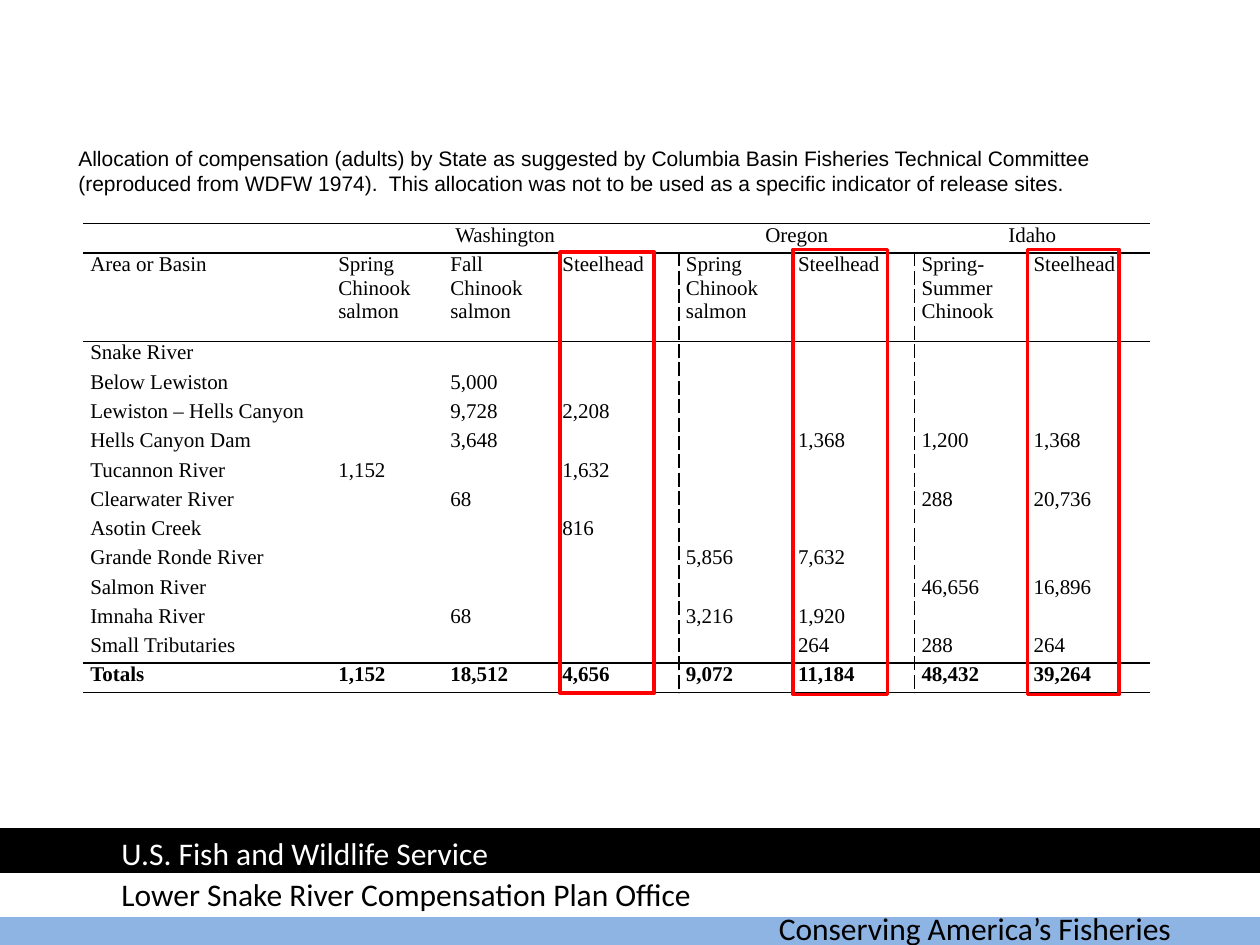
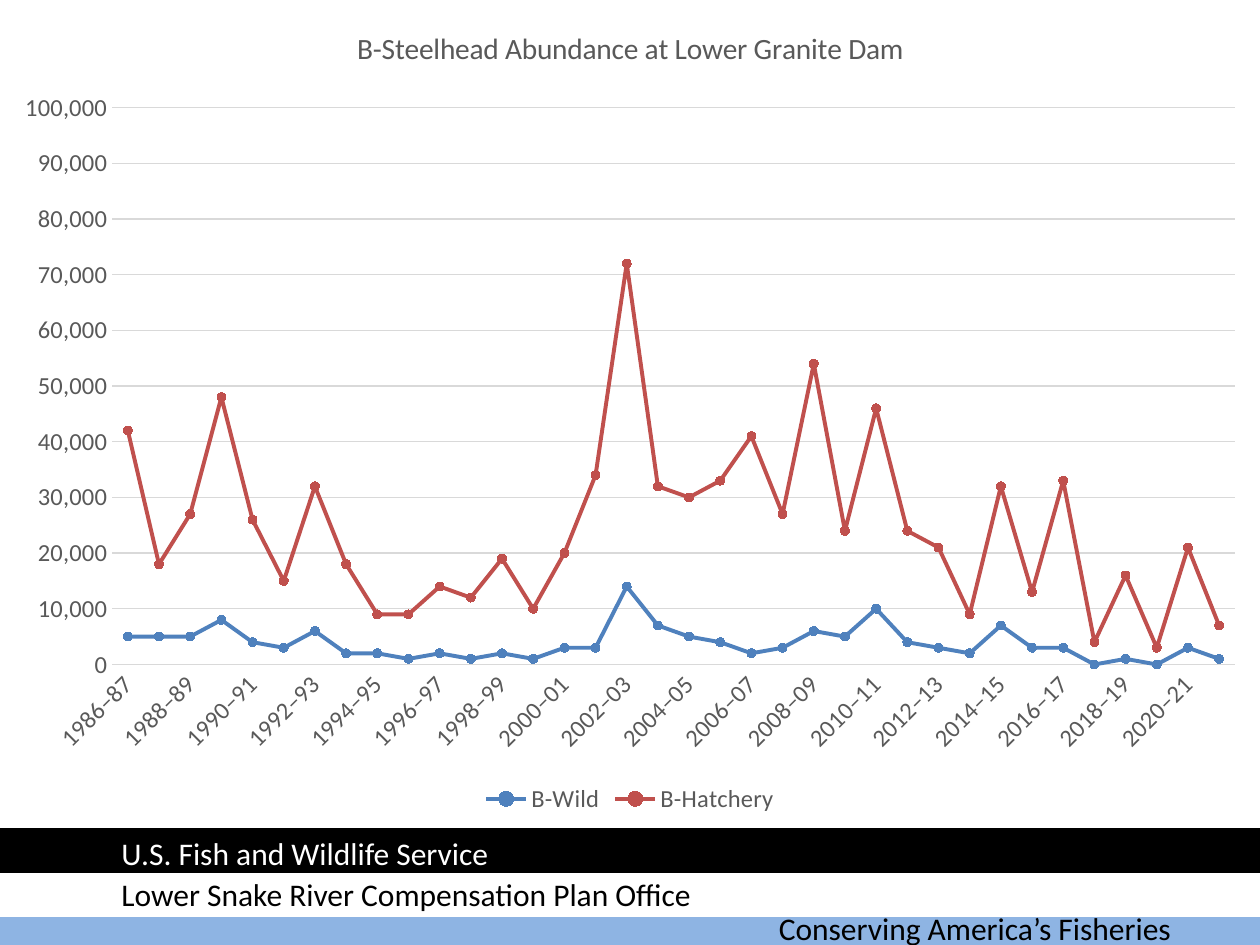
import pptx
import pptx.chart.data
import pptx.dml.color
import pptx.enum.chart
import pptx.enum.shapes
import pptx.enum.text
import pptx.oxml
import pptx.oxml.ns
import pptx.util

Cm = pptx.util.Cm
Pt = pptx.util.Pt
RGBColor = pptx.dml.color.RGBColor

BLACK = RGBColor(0x00, 0x00, 0x00)
WHITE = RGBColor(0xFF, 0xFF, 0xFF)
SKY = RGBColor(0x8E, 0xB4, 0xE3)
RED = RGBColor(0xFF, 0x00, 0x00)
GREY = RGBColor(0x59, 0x59, 0x59)
GRID_GREY = RGBColor(0xD9, 0xD9, 0xD9)
WILD_BLUE = RGBColor(0x4F, 0x81, 0xBD)
HATCHERY_RED = RGBColor(0xC0, 0x50, 0x4D)

PLAIN_TABLE_STYLE = "{2D5ABB26-0587-4C30-8999-92F81FD0307C}"

CAPTION = (
    "Allocation of compensation (adults) by State as suggested by Columbia Basin "
    "Fisheries Technical Committee (reproduced from WDFW 1974).  This allocation "
    "was not to be used as a specific indicator of release sites."
)

STATES = [("Washington", 1, 3), ("Oregon", 4, 5), ("Idaho", 6, 7)]
ALLOCATION = [
    ["Area or Basin", "Spring Chinook salmon", "Fall Chinook salmon", "Steelhead",
     "Spring Chinook salmon", "Steelhead", "Spring-Summer Chinook", "Steelhead"],
    ["Snake River", "", "", "", "", "", "", ""],
    ["Below Lewiston", "", "5,000", "", "", "", "", ""],
    ["Lewiston – Hells Canyon", "", "9,728", "2,208", "", "", "", ""],
    ["Hells Canyon Dam", "", "3,648", "", "", "1,368", "1,200", "1,368"],
    ["Tucannon River", "1,152", "", "1,632", "", "", "", ""],
    ["Clearwater River", "", "68", "", "", "", "288", "20,736"],
    ["Asotin Creek", "", "", "816", "", "", "", ""],
    ["Grande Ronde River", "", "", "", "5,856", "7,632", "", ""],
    ["Salmon River", "", "", "", "", "", "46,656", "16,896"],
    ["Imnaha River", "", "68", "", "3,216", "1,920", "", ""],
    ["Small Tributaries", "", "", "", "", "264", "288", "264"],
    ["Totals", "1,152", "18,512", "4,656", "9,072", "11,184", "48,432", "39,264"],
]
COLUMN_WIDTHS = [5, 2.26, 2.26, 2.49, 2.26, 2.49, 2.26, 2.49]
ROW_HEIGHT = 0.59
HEADING_HEIGHT = 1.78

FIRST_YEAR, LAST_YEAR = 1986, 2021
B_WILD = [
    5000, 5000, 5000, 8000, 4000, 3000, 6000, 2000, 2000, 1000, 2000, 1000,
    2000, 1000, 3000, 3000, 14000, 7000, 5000, 4000, 2000, 3000, 6000, 5000,
    10000, 4000, 3000, 2000, 7000, 3000, 3000, 0, 1000, 0, 3000, 1000,
]
B_HATCHERY = [
    37000, 13000, 22000, 40000, 22000, 12000, 26000, 16000, 7000, 8000, 12000, 11000,
    17000, 9000, 17000, 31000, 58000, 25000, 25000, 29000, 39000, 24000, 48000, 19000,
    36000, 20000, 18000, 7000, 25000, 10000, 30000, 4000, 15000, 3000, 18000, 6000,
]


def set_font(font, name, size, color, bold=False):
    font.name = name
    font.size = Pt(size)
    font.bold = bold
    font.color.rgb = color


def add_rectangle(page, left, top, width, height, line, fill=None):
    box = page.shapes.add_shape(
        pptx.enum.shapes.MSO_SHAPE.RECTANGLE, Cm(left), Cm(top), Cm(width), Cm(height))
    box.shadow.inherit = False
    box.line.color.rgb = line
    box.line.width = Pt(2)
    if fill is None:
        box.fill.background()
    else:
        box.fill.solid()
        box.fill.fore_color.rgb = fill


def add_text(page, text, left, top, width, height, font_name, size, color):
    box = page.shapes.add_textbox(Cm(left), Cm(top), Cm(width), Cm(height))
    frame = box.text_frame
    frame.word_wrap = True
    frame.text = text
    set_font(frame.paragraphs[0].font, font_name, size, color)
    return frame


def add_footer(page):
    for left, top, color in [(-0.03, 18.22, SKY), (0, 17.61, WHITE), (0, 16.73, BLACK)]:
        add_rectangle(page, left, top, 25.4, 0.84, color, color)
    for text, left, top, width, color in [
        ("Conserving America’s Fisheries", 15.45, 18.21, 9.32, BLACK),
        ("U.S. Fish and Wildlife Service", 2.2, 16.69, 10.57, WHITE),
        ("Lower Snake River Compensation Plan Office", 2.2, 17.51, 12.62, BLACK),
    ]:
        add_text(page, text, left, top, width, 1.02, "Calibri", 18, color)


def add_page(deck):
    page = deck.slides.add_slide(deck.slide_layouts[6])
    add_footer(page)
    return page


def set_borders(cell, borders):
    """Draw black 1 pt borders; borders maps L, R, T, B to a dash name."""
    properties = cell._tc.get_or_add_tcPr()
    for side in "LRTB":
        if side in borders:
            look = (f'<a:solidFill><a:srgbClr val="{BLACK}"/></a:solidFill>'
                    f'<a:prstDash val="{borders[side]}"/>')
        else:
            look = "<a:noFill/>"
        properties.append(pptx.oxml.parse_xml(
            f'<a:ln{side} {pptx.oxml.ns.nsdecls("a")} w="12700">{look}</a:ln{side}>'))


def border_rule(row, column, last_row):
    """Rule off the headings and totals, and part the states with dashes."""
    borders = {}
    if row in (0, 1, 2, last_row):
        borders["T"] = "solid"
    if row in (0, 1, last_row - 1, last_row):
        borders["B"] = "solid"
    if row > 0:
        first_columns = [first for _, first, _ in STATES[1:]]
        if column in first_columns:
            borders["L"] = "dash"
        if column + 1 in first_columns:
            borders["R"] = "dash"
    return borders


def style_cell(cell, borders, bold):
    cell.margin_left = cell.margin_right = Cm(0.14)
    cell.margin_top = cell.margin_bottom = 0
    set_borders(cell, borders)
    cell.fill.background()
    para = cell.text_frame.paragraphs[0]
    set_font(para.font, "Times New Roman", 12, BLACK, bold)
    para._p.get_or_add_endParaRPr().set("sz", "1200")


def add_allocation_table(page):
    last_row = len(ALLOCATION)
    heights = [ROW_HEIGHT, HEADING_HEIGHT] + [ROW_HEIGHT] * (last_row - 1)
    table = page.shapes.add_table(
        last_row + 1, len(COLUMN_WIDTHS), Cm(1.68), Cm(4.51),
        Cm(sum(COLUMN_WIDTHS)), Cm(sum(heights))).table
    table.first_row = table.horz_banding = False
    table._tbl.tblPr.find(pptx.oxml.ns.qn("a:tableStyleId")).text = PLAIN_TABLE_STYLE
    for column, width in zip(table.columns, COLUMN_WIDTHS):
        column.width = Cm(width)
    for row, height in zip(table.rows, heights):
        row.height = Cm(height)

    for state, first, last in STATES:
        cell = table.cell(0, first)
        cell.merge(table.cell(0, last))
        cell.text = state
        cell.text_frame.paragraphs[0].alignment = pptx.enum.text.PP_ALIGN.CENTER
    for row, values in enumerate(ALLOCATION, start=1):
        for column, value in enumerate(values):
            if value:
                table.cell(row, column).text = value
    for row in range(last_row + 1):
        for column in range(len(COLUMN_WIDTHS)):
            style_cell(table.cell(row, column), border_rule(row, column, last_row),
                       bold=row == last_row)


def style_axes(chart):
    no_tick = pptx.enum.chart.XL_TICK_MARK.NONE
    years, counts = chart.category_axis, chart.value_axis
    for axis in (years, counts):
        axis.major_tick_mark = axis.minor_tick_mark = no_tick
        set_font(axis.tick_labels.font, "Calibri", 14, GREY)
    years.format.line.color.rgb = GRID_GREY
    years.format.line.width = Pt(0.75)
    label_body = years._element.find(".//" + pptx.oxml.ns.qn("a:bodyPr"))
    label_body.set("rot", str(-45 * 60000))
    counts.format.line.fill.background()
    counts.minimum_scale = 0
    counts.maximum_scale = 100000
    counts.major_unit = 10000
    counts.tick_labels.number_format = "#,##0"
    counts.tick_labels.number_format_is_linked = False
    counts.major_gridlines.format.line.color.rgb = GRID_GREY
    counts.major_gridlines.format.line.width = Pt(0.75)


def style_series(series, color):
    series.smooth = False
    series.format.line.color.rgb = color
    series.format.line.width = Pt(2.25)
    marker = series.marker
    marker.style = pptx.enum.chart.XL_MARKER_STYLE.CIRCLE
    marker.size = 5
    marker.format.fill.solid()
    marker.format.fill.fore_color.rgb = color
    marker.format.line.color.rgb = color


def add_abundance_chart(page):
    data = pptx.chart.data.CategoryChartData(number_format="#,##0")
    data.categories = [f"{year}–{(year + 1) % 100:02d}"
                       for year in range(FIRST_YEAR, LAST_YEAR + 1)]
    data.add_series("B-Wild", B_WILD)
    data.add_series("B-Hatchery", B_HATCHERY)
    chart = page.shapes.add_chart(
        pptx.enum.chart.XL_CHART_TYPE.LINE_MARKERS_STACKED,
        0, 0, Cm(25.4), Cm(16.51), data).chart
    set_font(chart.font, "Calibri", 14, BLACK)
    chart.has_title = True
    title = chart.chart_title.text_frame
    title.text = "B-Steelhead Abundance at Lower Granite Dam"
    set_font(title.paragraphs[0].font, "Calibri", 16.8, GREY)
    chart.has_legend = True
    chart.legend.position = pptx.enum.chart.XL_LEGEND_POSITION.BOTTOM
    chart.legend.include_in_layout = False
    set_font(chart.legend.font, "Calibri", 14, GREY)
    style_axes(chart)
    chart.plots[0].vary_by_categories = False
    for series, color in zip(chart.plots[0].series, (WILD_BLUE, HATCHERY_RED)):
        style_series(series, color)


def build_allocation_page(deck):
    page = add_page(deck)
    add_allocation_table(page)
    caption = add_text(page, CAPTION, 1.4, 2.83, 22.56, 1.22, "Arial", 12, BLACK)
    caption.vertical_anchor = pptx.enum.text.MSO_ANCHOR.MIDDLE
    caption.margin_left = caption.margin_right = Cm(0.18)
    caption.margin_top = caption.margin_bottom = Cm(0.1)
    for left, top, width, height in [
        (11.29, 5.08, 1.9, 8.89), (15.99, 5.03, 1.9, 8.97), (20.71, 5.03, 1.85, 8.97),
    ]:
        add_rectangle(page, left, top, width, height, RED)


def main():
    deck = pptx.Presentation()
    deck.slide_width = Cm(25.4)
    deck.slide_height = Cm(19.05)
    build_allocation_page(deck)
    add_abundance_chart(add_page(deck))
    deck.save("out.pptx")


if __name__ == "__main__":
    main()
